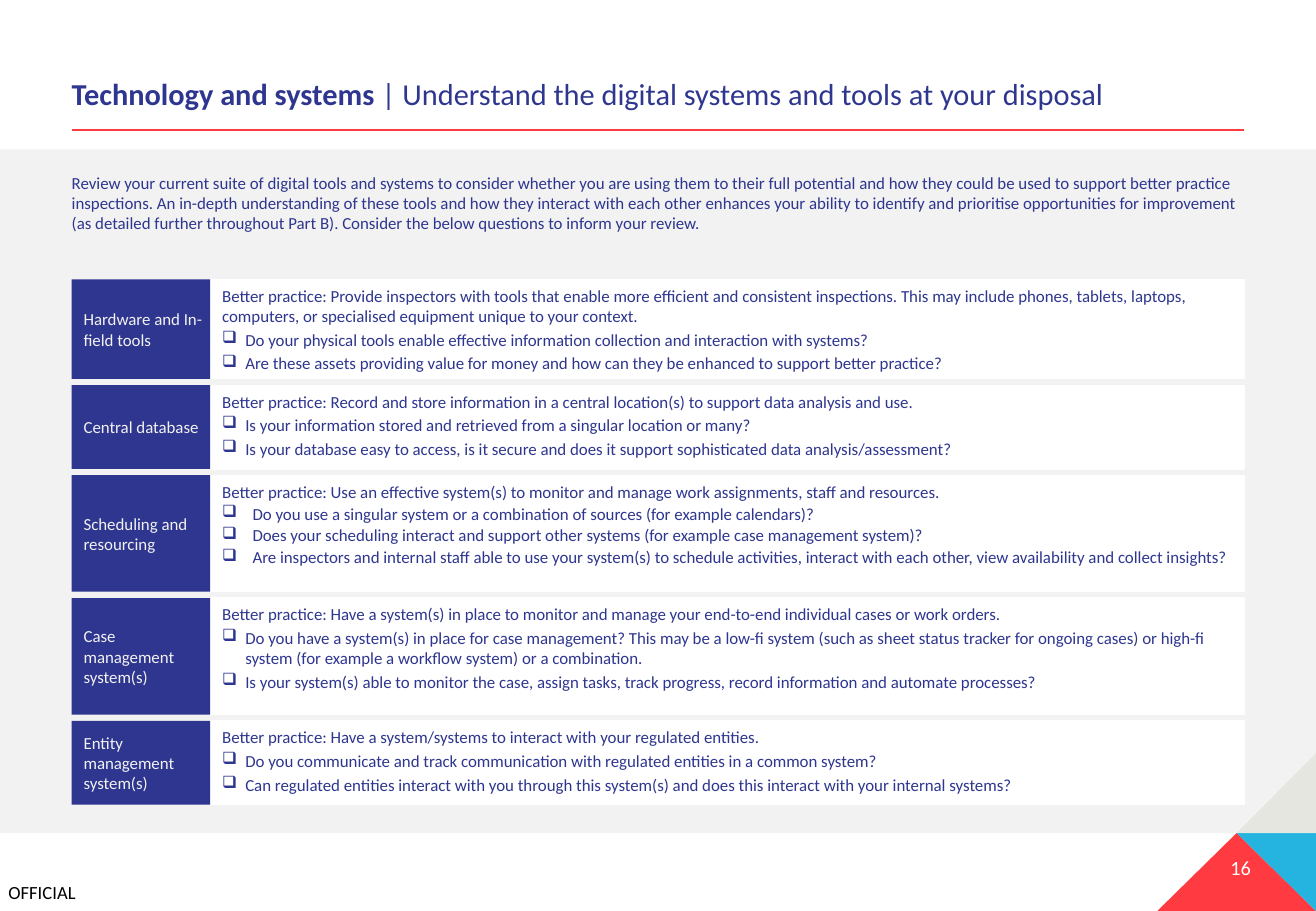
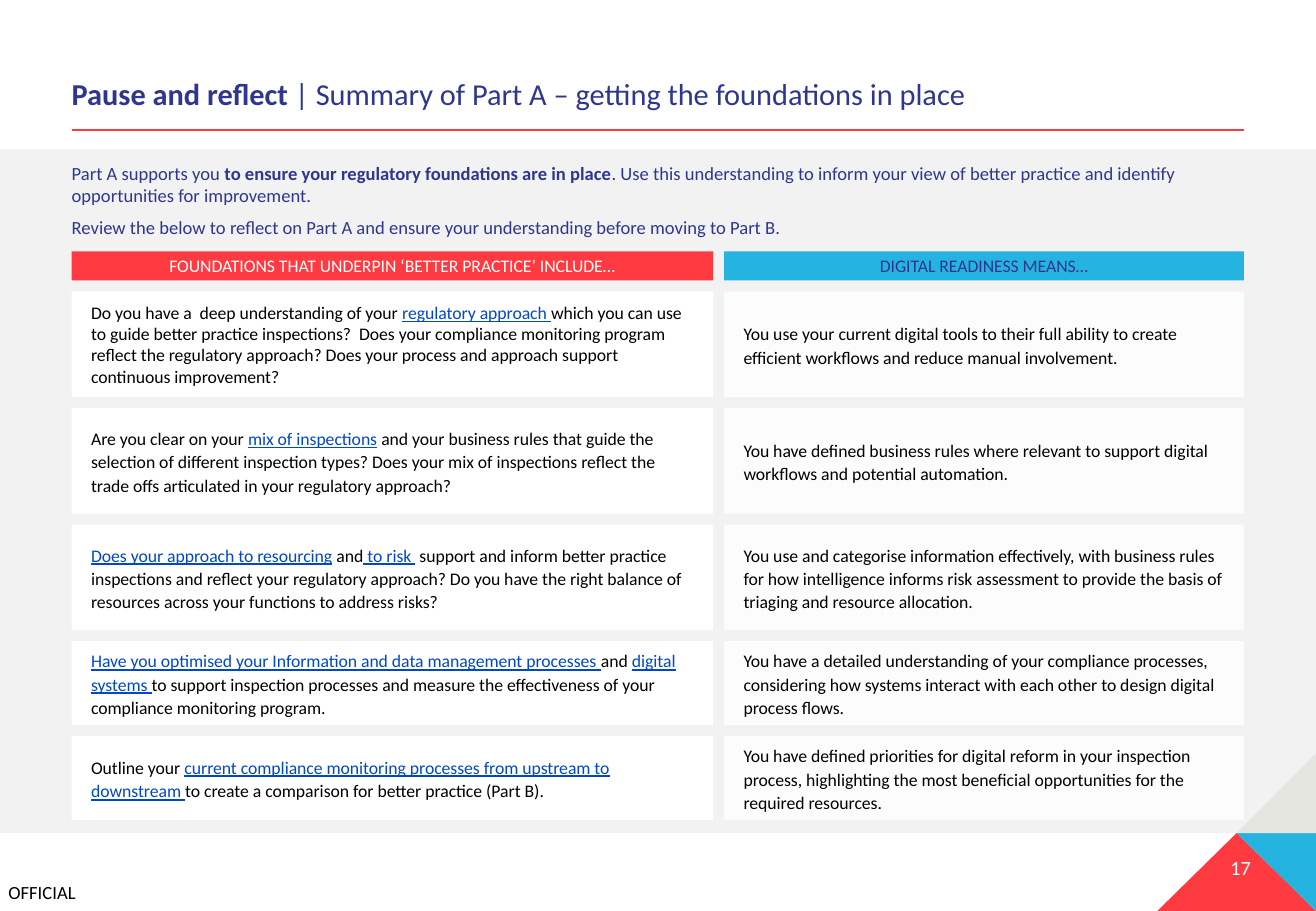
from dataclasses import dataclass
from typing import NamedTuple

from lxml import etree
from pptx import Presentation
from pptx import util as u
from pptx.dml.color import RGBColor
from pptx.enum import shapes, text
from pptx.oxml import ns

Pt = u.Pt


@dataclass(frozen=True)
class Theme:
    font: str = "Calibri"
    navy: str = "2E368F"
    red: str = "FF3A40"
    cyan: str = "25B3E0"
    stone: str = "E6E6E1"
    pale: str = "F2F2F2"
    white: str = "FFFFFF"
    black: str = "000000"
    link: str = "0048C7"
    title: float = 18
    number: float = 12
    lead: float = 11
    card: float = 10.5
    small: float = 10


class Box(NamedTuple):
    left: float
    top: float
    width: float
    height: float


class Style(NamedTuple):
    size: float
    color: str
    mark: str = "bold"
    after: float = 0
    lines: float = 1.0
    align: text.PP_ALIGN = text.PP_ALIGN.LEFT


class Topic(NamedTuple):
    label: str
    height: float
    lines: tuple[str, ...]
    indent: float = 13.7
    after: float = 2


class Pair(NamedTuple):
    height: float
    left: str
    right: str
    lines: float = 1.1
    after: float = 4.9


T = Theme()
WIDTH, HEIGHT = 780, 540
LEFT, SPAN = 42.5, 694.8
BAND = Box(0, 88.6, WIDTH, 405.2)
FOOT = BAND.top + BAND.height
PEAK = 733
MID = text.MSO_ANCHOR.MIDDLE
TOP = text.MSO_ANCHOR.TOP

TOPICS = (
    Topic("Hardware and In-field tools", 59, (
        "Better practice: Provide inspectors with tools that enable more efficient and consistent inspections. This may include phones, tablets, laptops, computers, or specialised equipment unique to your context.",
        "Do your physical tools enable effective information collection and interaction with systems?",
        "Are these assets providing value for money and how can they be enhanced to support better practice?")),
    Topic("Central database", 49.7, (
        "Better practice: Record and store information in a central location(s) to support data analysis and use.",
        "Is your information stored and retrieved from a singular location or many?",
        "Is your database easy to access, is it secure and does it support sophisticated data analysis/assessment?")),
    Topic("Scheduling and resourcing", 69.1, (
        "Better practice: Use an effective system(s) to monitor and manage work assignments, staff and resources.",
        "Do you use a singular system or a combination of sources (for example calendars)?",
        "Does your scheduling interact and support other systems (for example case management system)?",
        "Are inspectors and internal staff able to use your system(s) to schedule activities, interact with each other, view availability and collect insights?"),
        18, 1),
    Topic("Case management system(s)", 69.1, (
        "Better practice: Have a system(s) in place to monitor and manage your end-to-end individual cases or work orders.",
        "Do you have a system(s) in place for case management? This may be a low-fi system (such as sheet status tracker for ongoing cases) or high-fi system (for example a workflow system) or a combination.",
        "Is your system(s) able to monitor the case, assign tasks, track progress, record information and automate processes?")),
    Topic("Entity management system(s)", 49.7, (
        "Better practice: Have a system/systems to interact with your regulated entities.",
        "Do you communicate and track communication with regulated entities in a common system?",
        "Can regulated entities interact with you through this system(s) and does this interact with your internal systems?")),
)

PAIRS = (
    Pair(62.6,
         "Do you have a  deep understanding of your *regulatory approach *which you can use to guide better practice inspections?  Does your compliance monitoring program reflect the regulatory approach? Does your process and approach support continuous improvement?",
         "You use your current digital tools to their full ability to create efficient workflows and reduce manual involvement.",
         1.0, 0),
    Pair(62.6,
         "Are you clear on your *mix of inspections* and your business rules that guide the selection of different inspection types? Does your mix of inspections reflect the trade offs articulated in your regulatory approach?",
         "You have defined business rules where relevant to support digital workflows and potential automation."),
    Pair(62.6,
         "*Does your approach to resourcing* and* to risk * support and inform better practice inspections and reflect your regulatory approach? Do you have the right balance of resources across your functions to address risks?",
         "You use and categorise information effectively, with business rules for how intelligence informs risk assessment to provide the basis of triaging and resource allocation."),
    Pair(49.7,
         "*Have you optimised your Information and data management processes *and *digital systems *to support inspection processes and measure the effectiveness of your compliance monitoring program.",
         "You have a detailed understanding of your compliance processes, considering how systems interact with each other to design digital process flows."),
    Pair(49.7,
         "Outline your *current compliance monitoring processes from upstream to downstream *to create a comparison for better practice (Part B).",
         "You have defined priorities for digital reform in your inspection process, highlighting the most beneficial opportunities for the required resources."),
)


def paint(fill, color: str) -> None:
    fill.solid()
    fill.fore_color.rgb = RGBColor.from_string(color)


def bullet(para, indent: float) -> None:
    props = para._p.get_or_add_pPr()
    props.set("marL", str(Pt(indent)))
    props.set("indent", str(-Pt(indent)))
    if indent:
        etree.SubElement(props, ns.qn("a:buChar")).set("char", "❑")
    else:
        etree.SubElement(props, ns.qn("a:buNone"))


def write(shape, lines: tuple[str, ...], style: Style, anchor=TOP,
          sides: tuple[float, float] = (0, 0), edge: float = 3.6,
          indent: float = 0) -> None:
    frame = shape.text_frame
    frame.word_wrap = True
    frame.auto_size = text.MSO_AUTO_SIZE.NONE
    frame.vertical_anchor = anchor
    frame.margin_left, frame.margin_right = map(Pt, sides)
    frame.margin_top = frame.margin_bottom = Pt(edge)
    for row, line in enumerate(lines):
        para = frame.add_paragraph() if row else frame.paragraphs[0]
        bullet(para, indent if row else 0)
        para.alignment = style.align
        para.line_spacing = style.lines
        para.space_before = Pt(0)
        para.space_after = Pt(style.after)
        for spot, part in enumerate(line.split("*")):
            if not part:
                continue
            run = para.add_run()
            run.text = part
            font, marked = run.font, spot % 2 == 1
            font.name, font.size = T.font, Pt(style.size)
            font.bold = marked and style.mark == "bold"
            linked = marked and style.mark == "link"
            font.underline = linked
            font.color.rgb = RGBColor.from_string(T.link if linked else style.color)


def block(slide, box: Box, color: str, edge: str = "", alpha: int = 100):
    shape = slide.shapes.add_shape(shapes.MSO_SHAPE.RECTANGLE, *map(Pt, box))
    shape.shadow.inherit = False
    paint(shape.fill, color)
    if edge:
        paint(shape.line.fill, edge)
        shape.line.width = Pt(0.75)
    else:
        shape.line.fill.background()
    if alpha < 100:
        tint = shape.element.spPr.find(".//" + ns.qn("a:srgbClr"))
        etree.SubElement(tint, ns.qn("a:alpha")).set("val", str(alpha * 1000))
    return shape


def wedge(slide, points: tuple[tuple[float, float], ...], color: str) -> None:
    first, *rest = [(Pt(x), Pt(y)) for x, y in points]
    path = slide.shapes.build_freeform(*first)
    path.add_line_segments(rest, close=True)
    shape = path.convert_to_shape()
    shape.shadow.inherit = False
    paint(shape.fill, color)
    shape.line.fill.background()


def label(slide, box: Box, words: str, style: Style, edge: float) -> None:
    write(slide.shapes.add_textbox(*map(Pt, box)), (words,), style, edge=edge)


def place(shape, box: Box) -> None:
    shape.left, shape.top, shape.width, shape.height = map(Pt, box)


def begin(deck, number: int, title: str, lead: tuple[str, ...], box: Box, size: float):
    slide = deck.slides.add_slide(deck.slide_layouts[1])
    block(slide, BAND, T.pale)
    wedge(slide, ((PEAK, FOOT), (686, HEIGHT), (WIDTH, HEIGHT)), T.red)
    wedge(slide, ((WIDTH, FOOT), (PEAK, FOOT), (WIDTH, HEIGHT)), T.cyan)
    wedge(slide, ((WIDTH, 446.5), (PEAK, FOOT), (WIDTH, FOOT)), T.stone)
    label(slide, Box(5, 522, 50, 13), "OFFICIAL", Style(T.lead, T.black), 0)
    label(slide, Box(679, 503.3, 62.4, 21.6), str(number),
          Style(T.number, T.white, align=text.PP_ALIGN.RIGHT), 3.6)
    rule = slide.shapes.add_connector(
        shapes.MSO_CONNECTOR.STRAIGHT, Pt(LEFT), Pt(77), Pt(LEFT + SPAN), Pt(77))
    paint(rule.line.fill, T.red)
    rule.line.width = Pt(1.25)
    etree.SubElement(rule.element.spPr, ns.qn("a:effectLst"))
    head, body = slide.shapes.title, slide.placeholders[1]
    place(head, Box(LEFT, 23, SPAN, 46.8))
    write(head, (title,), Style(T.title, T.navy, lines=0.9), text.MSO_ANCHOR.BOTTOM)
    place(body, box)
    write(body, lead, Style(size, T.navy, after=6))
    for holder in (head, body):
        slide.shapes.element.append(holder.element)
    return slide


def systems(deck) -> None:
    slide = begin(
        deck, 16,
        "*Technology and systems* | Understand the digital systems and tools at your disposal",
        ("Review your current suite of digital tools and systems to consider whether you are using them to their full potential and how they could be used to support better practice inspections. An in-depth understanding of these tools and how they interact with each other enhances your ability to identify and prioritise opportunities for improvement (as detailed further throughout Part B). Consider the below questions to inform your review.",),
        Box(LEFT, 98.6, SPAN, 53.3), T.small)
    top, gap, side = 165.6, 3.7, 82.1
    for topic in TOPICS:
        card = block(slide, Box(LEFT + side, top, SPAN - side, topic.height),
                     T.white, T.white)
        write(card, topic.lines, Style(T.small, T.navy, after=topic.after),
              sides=(7.2, 7.2), indent=topic.indent)
        tag = block(slide, Box(LEFT, top, side, topic.height), T.navy)
        write(tag, (topic.label,), Style(T.small, T.pale), MID, (7.2, 4.3))
        top += topic.height + gap


def reflect(deck) -> None:
    slide = begin(
        deck, 17,
        "*Pause and reflect *| Summary of Part A – getting the foundations in place",
        ("Part A supports you *to ensure your regulatory foundations are in place*. Use this understanding to inform your view of better practice and identify opportunities for improvement.",
         "Review the below to reflect on Part A and ensure your understanding before moving to Part B."),
        Box(LEFT, 92.2, SPAN, 58.3), T.lead)
    start, gap, wide = 149, 6.5, 380.2
    right = LEFT + wide + gap
    thin = LEFT + SPAN - right
    tall = 17.3
    for left, width, words, fill, color in (
            (LEFT, wide, "FOUNDATIONS THAT UNDERPIN ‘BETTER PRACTICE’ INCLUDE…", T.red, T.white),
            (right, thin, "DIGITAL READINESS MEANS…", T.cyan, T.navy)):
        write(block(slide, Box(left, start, width, tall), fill), (words,),
              Style(T.card, color, align=text.PP_ALIGN.CENTER), MID)
    top = start + tall + gap
    for pair in PAIRS:
        for left, width, words, alpha, lines, after in (
                (LEFT, wide, pair.left, 100, pair.lines, pair.after),
                (right, thin, pair.right, 80, 1.1, 4.9)):
            card = block(slide, Box(left, top, width, pair.height), T.white, alpha=alpha)
            write(card, (words,), Style(T.card, T.black, "link", after, lines),
                  MID, (11.5, 11.5))
        top += pair.height + gap


def main() -> None:
    deck = Presentation()
    deck.slide_width, deck.slide_height = Pt(WIDTH), Pt(HEIGHT)
    systems(deck)
    reflect(deck)
    deck.save("out.pptx")


if __name__ == "__main__":
    main()
